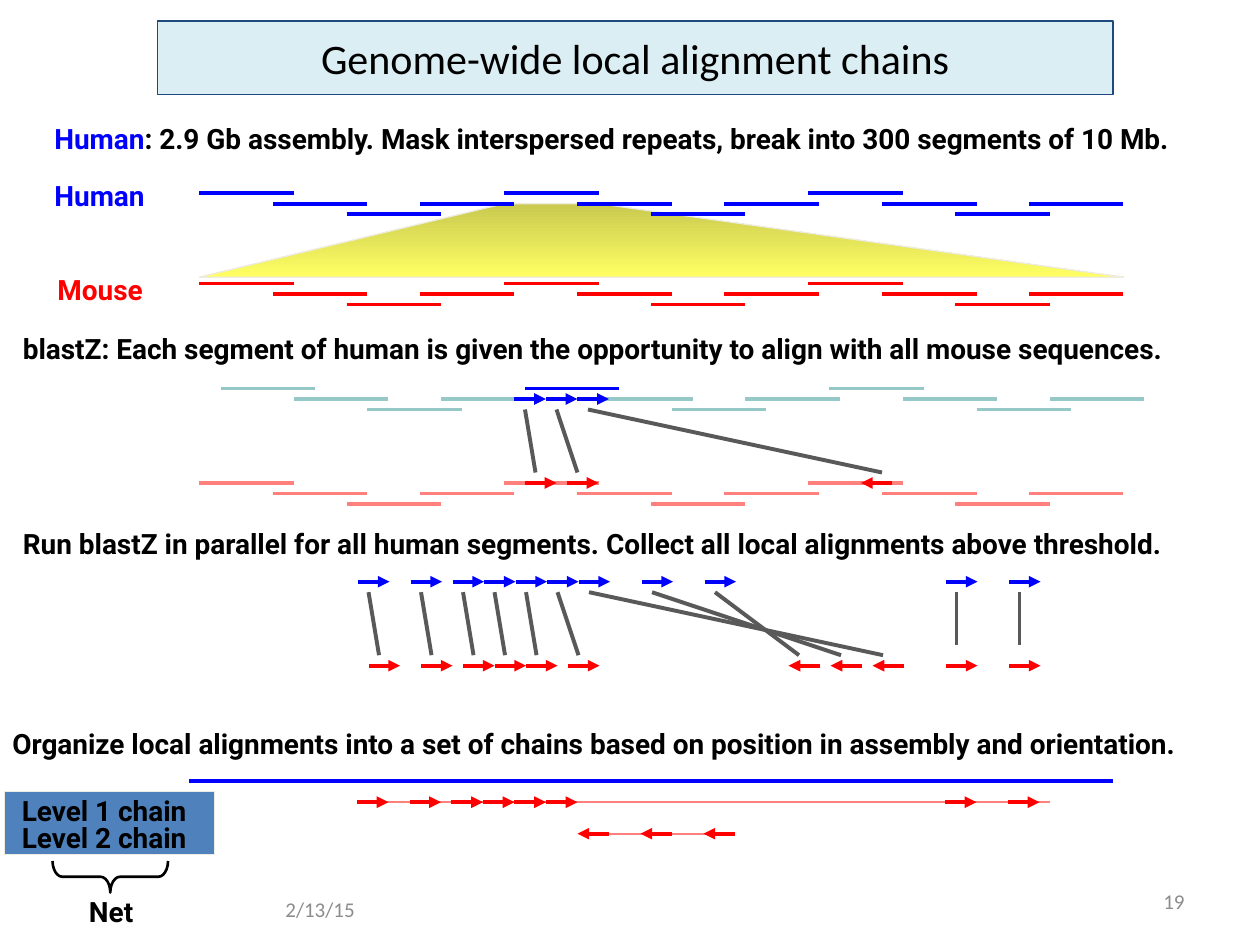
from lxml import etree
from pptx import Presentation
from pptx import util as u
from pptx.dml.color import RGBColor
from pptx.enum import shapes as kinds, text as txt
from pptx.oxml.ns import qn

BLACK = RGBColor(0x00, 0x00, 0x00)
BLUE = RGBColor(0x00, 0x00, 0xFF)
RED = RGBColor(0xFF, 0x00, 0x00)
PALE_BLUE = RGBColor(0x96, 0xC8, 0xC8)
PALE_RED = RGBColor(0xFF, 0x80, 0x7D)
LINK_GREY = RGBColor(0x59, 0x59, 0x59)
FOOTER_GREY = RGBColor(0x8C, 0x8C, 0x8C)
TITLE_FILL = RGBColor(0xDB, 0xEE, 0xF4)
TITLE_EDGE = RGBColor(0x1F, 0x49, 0x7D)
LEVEL_FILL = RGBColor(0x4F, 0x81, 0xBD)
CREAM = RGBColor(0xEE, 0xEC, 0xE1)
BEAM_TOP = RGBColor(0xC9, 0xC9, 0x50)
BEAM_BOTTOM = RGBColor(0xFF, 0xFF, 0x64)

LABEL = {"name": "Roboto", "size": u.Pt(16), "bold": True}
TITLE = {"name": "Calibri", "size": u.Pt(24), "bold": False}
FOOTER = {"name": "Calibri", "size": u.Pt(12), "bold": False}

ARROW = 3
LABEL_HEIGHT = 4.4
SEGMENT = 9
SEGMENT_ROWS = (0, 1, 2, 1)


def steps(count):
    """Length of grid steps; the slide is 120 steps wide and 90 high."""
    return u.Cm(count * 2.54 / 12)


def box(left, top, width, height):
    return [steps(n) for n in (left, top, width, height)]


def write(frame, pieces, style, align=txt.PP_ALIGN.LEFT):
    """Put (wording, colour) pieces into the first paragraph."""
    paragraph = frame.paragraphs[0]
    paragraph.alignment = align
    for wording, colour in pieces:
        run = paragraph.add_run()
        run.text = wording
        for attribute, value in style.items():
            setattr(run.font, attribute, value)
        run.font.color.rgb = colour


def label(slide, left, top, width, *pieces):
    frame = slide.shapes.add_textbox(*box(left, top, width, LABEL_HEIGHT)).text_frame
    frame.word_wrap = False
    frame.auto_size = txt.MSO_AUTO_SIZE.SHAPE_TO_FIT_TEXT
    write(frame, pieces, LABEL)


def line(slide, start, end, colour, weight=2.25, arrow=False):
    stroke = slide.shapes.add_connector(
        kinds.MSO_CONNECTOR.STRAIGHT, *[steps(n) for n in (*start, *end)])
    stroke.line.color.rgb = colour
    stroke.line.width = u.Pt(weight)
    if arrow:
        etree.SubElement(stroke.line._get_or_add_ln(), qn("a:tailEnd"), type="triangle")
    etree.SubElement(stroke._element.spPr, qn("a:effectLst"))


def panel(slide, bounds, fill, edge, weight):
    area = slide.shapes.add_shape(kinds.MSO_SHAPE.RECTANGLE, *box(*bounds))
    area.shadow.inherit = False
    area.fill.solid()
    area.fill.fore_color.rgb = fill
    area.line.color.rgb = edge
    area.line.width = u.Pt(weight)
    return area


def local_match(slide, left, top, colour, reverse=False):
    """Short arrow whose left end is given, whichever way it points."""
    ends = [(left, top), (left + ARROW, top)]
    if reverse:
        ends.reverse()
    line(slide, *ends, colour, arrow=True)


def segments(slide, left, top, colour, chosen=None):
    """Twelve overlapping segments on three rows; the chosen one is blue."""
    for index in range(12):
        cycle, place = divmod(index, 4)
        x, y = left + 29 * cycle + 7 * place, top + SEGMENT_ROWS[place]
        line(slide, (x, y), (x + SEGMENT, y), BLUE if index == chosen else colour)


def alignments(slide, left, top, matches):
    """Each match: human start, mouse start, link end, link depth, reversed."""
    for human, mouse, link_end, depth, reverse in matches:
        line(slide, (left + human + 1, top + 1), (left + link_end, top + 1 + depth), LINK_GREY)
        local_match(slide, left + human, top, BLUE)
        local_match(slide, left + mouse, top + 8, RED, reverse)


def title_bar(slide, *bounds):
    bar = panel(slide, bounds, TITLE_FILL, TITLE_EDGE, 1)
    bar.text_frame.vertical_anchor = txt.MSO_ANCHOR.MIDDLE
    write(bar.text_frame, [("Genome-wide local alignment chains", BLACK)],
          TITLE, txt.PP_ALIGN.CENTER)


def beam(slide, left, top):
    """Yellow spread from one human segment to the whole mouse assembly."""
    corners = [(29, 0), (0, 7), (88, 7), (38, 0), (30, 0)]
    points = [(steps(left + x), steps(top + y)) for x, y in corners]
    builder = slide.shapes.build_freeform(*points[0])
    builder.add_line_segments(points[1:], close=True)
    spread = builder.convert_to_shape()
    spread.shadow.inherit = False
    spread.fill.gradient()
    spread.fill.gradient_angle = 270
    for stop, colour, position in zip(
            spread.fill.gradient_stops, (BEAM_TOP, BEAM_BOTTOM), (0, 1)):
        stop.color.rgb = colour
        stop.position = position
    spread.line.color.rgb = CREAM
    spread.line.width = u.Pt(0.75)


def assemblies(slide, left, top):
    label(slide, left, top, 114, ("Human", BLUE),
          (": 2.9 Gb assembly. Mask interspersed repeats, break into 300 segments of 10 Mb.", BLACK))
    label(slide, left, top + 5.4, 11.4, ("Human", BLUE))
    label(slide, left + 0.3, top + 14.4, 12.7, ("Mouse", RED))
    beam(slide, left + 15, top + 8.4)
    segments(slide, left + 15, top + 7.4, BLUE)
    segments(slide, left + 15, top + 16, RED)


def one_segment_search(slide, left, top):
    label(slide, left, top, 120, (
        "blastZ: Each segment of human is given the opportunity to align with all mouse sequences.",
        BLACK))
    segments(slide, left + 20, top + 6, PALE_BLUE, chosen=4)
    segments(slide, left + 18, top + 15, PALE_RED)
    alignments(slide, left + 48, top + 7, [
        (0, 1, 2, 6, False), (3, 5, 6, 6, False), (6, 33, 35, 6, True)])


def parallel_search(slide, left, top):
    label(slide, left, top, 118, (
        "Run blastZ in parallel for all human segments. Collect all local alignments above threshold.",
        BLACK))
    forward = [(0, 1), (5, 6), (9, 10), (12, 13), (15, 16), (18, 20)]
    inverted = [(21, 49), (27, 45), (33, 41)]
    aligned = [(56, 56), (62, 62)]
    groups = [(forward, 6, False), (inverted, 6, True), (aligned, 5, False)]
    alignments(slide, left + 33.1, top + 5.8, [
        (human, mouse, mouse + 1, depth, reverse)
        for pairs, depth, reverse in groups for human, mouse in pairs])


def chain(slide, top, start, end, matches, reverse=False):
    line(slide, (start, top), (end, top), PALE_RED, weight=1)
    for match in matches:
        local_match(slide, match, top, RED, reverse)


def net_of_chains(slide, left, top):
    label(slide, left, top, 121, (
        "Organize local alignments into a set of chains based on position in assembly and orientation.",
        BLACK))
    line(slide, (left + 18, top + 5.8), (left + 106, top + 5.8), BLUE)
    chain(slide, top + 7.8, left + 34, left + 100,
          [left + x for x in (34, 39, 43, 46, 49, 52, 90, 96)])
    chain(slide, top + 10.8, left + 56, left + 70,
          [left + x for x in (55, 61, 67)], reverse=True)

    panel(slide, (left + 0.4, top + 6.8, 20, 6), LEVEL_FILL, CREAM, 0.75)
    for level in (1, 2):
        label(slide, left + 0.9, top + 3.8 + 2.6 * level, 19.2, (f"Level {level} chain", BLACK))
    brace = slide.shapes.add_shape(
        kinds.MSO_SHAPE.RIGHT_BRACE, *box(left + 9, top + 9.4, 3, 11))
    brace.rotation = 90
    brace.adjustments[0] = 0.31
    brace.shadow.inherit = False
    brace.fill.background()
    brace.line.color.rgb = BLACK
    brace.line.width = u.Pt(1.5)
    label(slide, left + 7.3, top + 16, 6.7, ("Net", BLACK))


def footer(slide, left, top, wording, align):
    frame = slide.shapes.add_textbox(*box(left, top, 28, 4.8)).text_frame
    frame.word_wrap = True
    frame.vertical_anchor = txt.MSO_ANCHOR.MIDDLE
    write(frame, [(wording, FOOTER_GREY)], FOOTER, align)


def main():
    deck = Presentation()
    deck.slide_width, deck.slide_height = u.Cm(25.4), u.Cm(19.05)
    slide = deck.slides.add_slide(deck.slide_layouts[6])
    title_bar(slide, 15, 2, 91, 7)
    assemblies(slide, 4, 11)
    one_segment_search(slide, 1, 31)
    parallel_search(slide, 1, 49.6)
    net_of_chains(slide, 0, 68.6)
    footer(slide, 26, 84.2, "2/13/15", txt.PP_ALIGN.LEFT)
    footer(slide, 86, 83.4, "19", txt.PP_ALIGN.RIGHT)
    deck.save("out.pptx")


if __name__ == "__main__":
    main()
